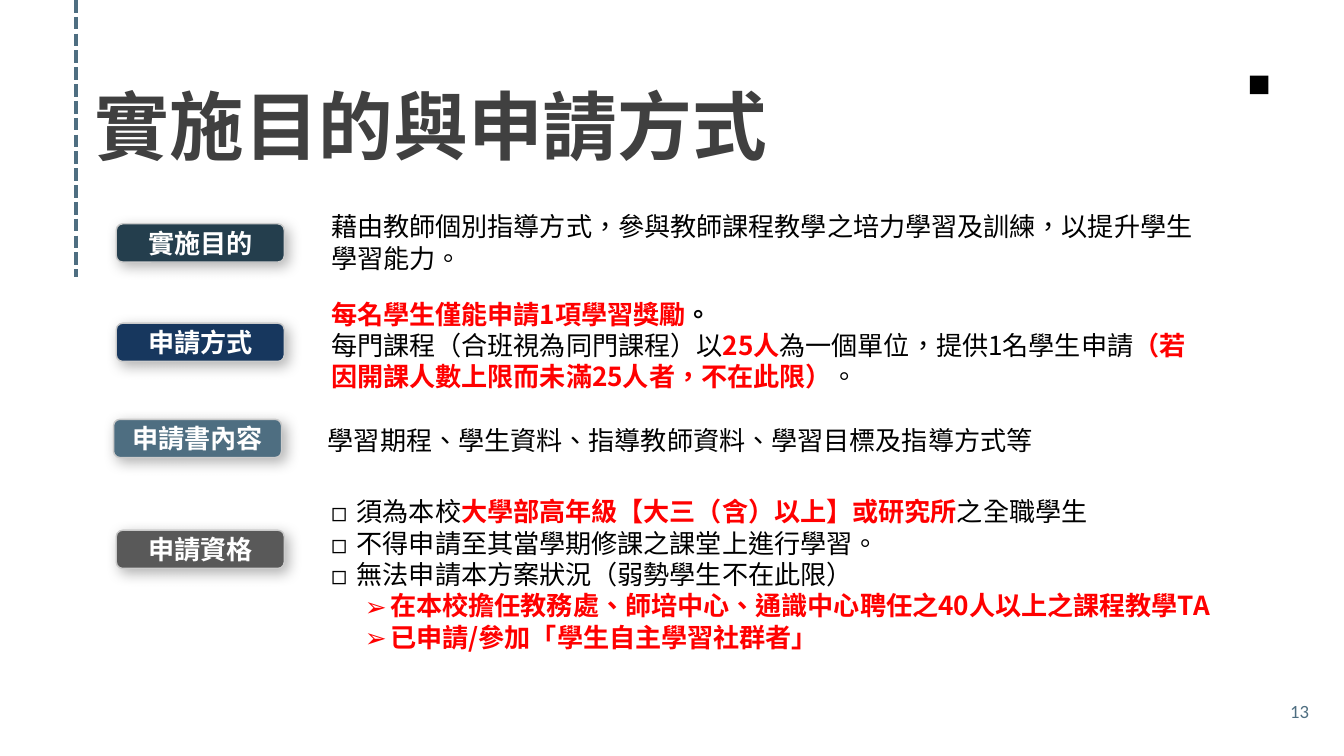
"""Build the slide on the purpose of the learning award and how to apply."""
import pptx
import pptx.util
import pptx.dml.color
import pptx.enum.dml
import pptx.enum.shapes
import pptx.enum.text
import pptx.oxml
import pptx.oxml.ns
import lxml.etree

Pt = pptx.util.Pt
ALIGN = pptx.enum.text.PP_ALIGN
ANCHOR = pptx.enum.text.MSO_ANCHOR
SHAPES = pptx.enum.shapes.MSO_SHAPE

COLORS = {
    "text": "000000", "title": "404040", "accent": "4E6E81", "alert": "FF0000",
    "white": "FFFFFF", "border": "CBCBCB", "teal": "243E4D", "navy": "17375E",
    "gray": "595959",
}
CJK_FONT = "Noto Sans CJK SC"
TITLE = "實施目的與申請方式"
PAGE_NUMBER = "13"
PILL_SIZE = (180, 41)
LABEL_INSET = 10.8
BULLETS = {"box": ("◻", 27.36), "arrow": ("➢", 63.36)}
HANGING = 27.36

SECTIONS = [
    {"label": "實施目的", "color": "teal", "pill": (124.6, 239.8), "body": (347.8, 222.5, 952.6, 75),
     "paragraphs": [
         (None, [("藉由教師個別指導方式，參與教師課程教學之培力學習及訓練，以提升學生學習能力。", False)])]},
    {"label": "申請方式", "color": "navy", "pill": (124.6, 346.3), "body": (347.8, 316.1, 952.6, 108.7),
     "paragraphs": [
         (None, [("每名學生僅能申請1項學習獎勵", True), ("。", "bold")]),
         (None, [("每門課程（合班視為同門課程）以", False), ("25人", True),
                 ("為一個單位，提供1名學生申請", False),
                 ("（若因開課人數上限而未滿25人者，不在此限）", True), ("。", False)])]},
    {"label": "申請書內容", "color": "accent", "pill": (121.7, 449.3), "body": (344.2, 451.4, 989.3, 41),
     "paragraphs": [
         (None, [("學習期程、學生資料、指導教師資料、學習目標及指導方式等", False)])]},
    {"label": "申請資格", "color": "gray", "pill": (124.6, 568.1), "body": (347.8, 527.8, 979.9, 177.1),
     "paragraphs": [
         ("box", [("須為本校", False), ("大學部高年級【大三（含）以上】或研究所", True), ("之全職學生", False)]),
         ("box", [("不得申請至其當學期修課之課堂上進行學習。", False)]),
         ("box", [("無法申請本方案狀況（弱勢學生不在此限）", False)]),
         ("arrow", [("在本校擔任教務處、師培中心、通識中心聘任之40人以上之課程教學TA", True)]),
         ("arrow", [("已申請/參加「學生自主學習社群者」", True)])]},
]


def rgb(name):
    """Return a named colour."""
    return pptx.dml.color.RGBColor.from_string(COLORS[name])


def add_xml(parent, tag, **attributes):
    """Append a drawing element to a parent."""
    return lxml.etree.SubElement(parent, pptx.oxml.ns.qn(tag), attributes)


def place(shape, left, top, width, height):
    """Set the position and size of a shape."""
    shape.left, shape.top, shape.width, shape.height = map(Pt, (left, top, width, height))


def add_text(paragraph, text, size=28, color="text", bold=False, font=CJK_FONT):
    """Add a formatted run to a paragraph."""
    run = paragraph.add_run()
    run.text = text
    run.font.size = Pt(size)
    run.font.bold = bold
    run.font.name = font
    run.font.color.rgb = rgb(color)
    properties = run.font._element
    properties.set("lang", "zh-TW")
    add_xml(properties, "a:ea", typeface=font)


def prepare_frame(shape, margins=(7.2, 3.6), anchor=ANCHOR.TOP):
    """Give a text frame wrapping, margins and anchor."""
    frame = shape.text_frame
    frame.word_wrap = True
    frame.auto_size = pptx.enum.text.MSO_AUTO_SIZE.NONE
    frame.margin_left = frame.margin_right = Pt(margins[0])
    frame.margin_top = frame.margin_bottom = Pt(margins[1])
    frame.vertical_anchor = anchor
    return frame


def add_box(slide, left, top, width, height, **frame_format):
    """Add a text box and return its frame."""
    box = slide.shapes.add_textbox(*map(Pt, (left, top, width, height)))
    return prepare_frame(box, **frame_format)


def set_bullet(paragraph, kind):
    """Give a paragraph a hanging bullet."""
    character, margin = BULLETS[kind]
    properties = paragraph._p.get_or_add_pPr()
    properties.set("marL", str(Pt(margin)))
    properties.set("indent", str(-Pt(HANGING)))
    add_xml(properties, "a:buFont", typeface=CJK_FONT)
    add_xml(properties, "a:buChar", char=character)


def add_pill(slide, left, top, color):
    """Add a rounded label background with a soft shadow."""
    pill = slide.shapes.add_shape(SHAPES.ROUNDED_RECTANGLE, *map(Pt, (left, top, *PILL_SIZE)))
    pill.fill.solid()
    pill.fill.fore_color.rgb = rgb(color)
    pill.line.color.rgb = rgb("border")
    pill.line.width = Pt(1.5)
    effects = add_xml(pill._element.spPr, "a:effectLst")
    shadow = add_xml(effects, "a:outerShdw", blurRad=str(Pt(15)), dist=str(Pt(6)),
                     dir="2700000", algn="ctr", rotWithShape="0")
    add_xml(add_xml(shadow, "a:srgbClr", val=COLORS["text"]), "a:alpha", val="30000")


def add_section(slide, section):
    """Add one label with its explanation."""
    left, top = section["pill"]
    add_pill(slide, left, top, section["color"])
    label_width = PILL_SIZE[0] - 2 * LABEL_INSET
    label = add_box(slide, left + LABEL_INSET, top, label_width, PILL_SIZE[1]).paragraphs[0]
    label.alignment = ALIGN.CENTER
    label.line_spacing = Pt(33.5)
    add_text(label, section["label"], color="white", bold=True)

    frame = add_box(slide, *section["body"])
    for index, (bullet, runs) in enumerate(section["paragraphs"]):
        paragraph = frame.add_paragraph() if index else frame.paragraphs[0]
        paragraph.line_spacing = Pt(33.5)
        if bullet:
            set_bullet(paragraph, bullet)
        for text, emphasis in runs:
            add_text(paragraph, text, bold=bool(emphasis),
                     color="alert" if emphasis is True else "text")


def main():
    """Build and save the presentation."""
    presentation = pptx.Presentation()
    presentation.slide_width, presentation.slide_height = Pt(1440), Pt(810)
    slide = presentation.slides.add_slide(presentation.slide_layouts[5])

    rule = slide.shapes.add_connector(
        pptx.enum.shapes.MSO_CONNECTOR.STRAIGHT, *map(Pt, (81.4, 0, 81.4, 296.6)))
    rule.line.color.rgb = rgb("accent")
    rule.line.width = Pt(4.5)
    rule.line.dash_style = pptx.enum.dml.MSO_LINE.SQUARE_DOT
    add_xml(rule._element.spPr, "a:effectLst")

    square = slide.shapes.add_shape(SHAPES.RECTANGLE, *map(Pt, (1339.2, 81, 19.8, 19.8)))
    square.shadow.inherit = False
    square.fill.solid()
    square.fill.fore_color.rgb = rgb("text")
    square.line.fill.background()

    title = slide.shapes.title
    place(title, 101.5, 79.2, 918, 97.2)
    heading = prepare_frame(title, margins=(0, 0)).paragraphs[0]
    heading.alignment = ALIGN.LEFT
    heading.line_spacing = Pt(102)
    add_text(heading, TITLE, size=80, color="title", bold=True)

    for section in SECTIONS:
        add_section(slide, section)

    number = add_box(slide, 1242, 747.4, 167.8, 28.8, anchor=ANCHOR.MIDDLE).paragraphs[0]
    number.alignment = ALIGN.RIGHT
    add_text(number, PAGE_NUMBER, size=20, color="accent", font="Calibri")
    presentation.save("out.pptx")


if __name__ == "__main__":
    main()
